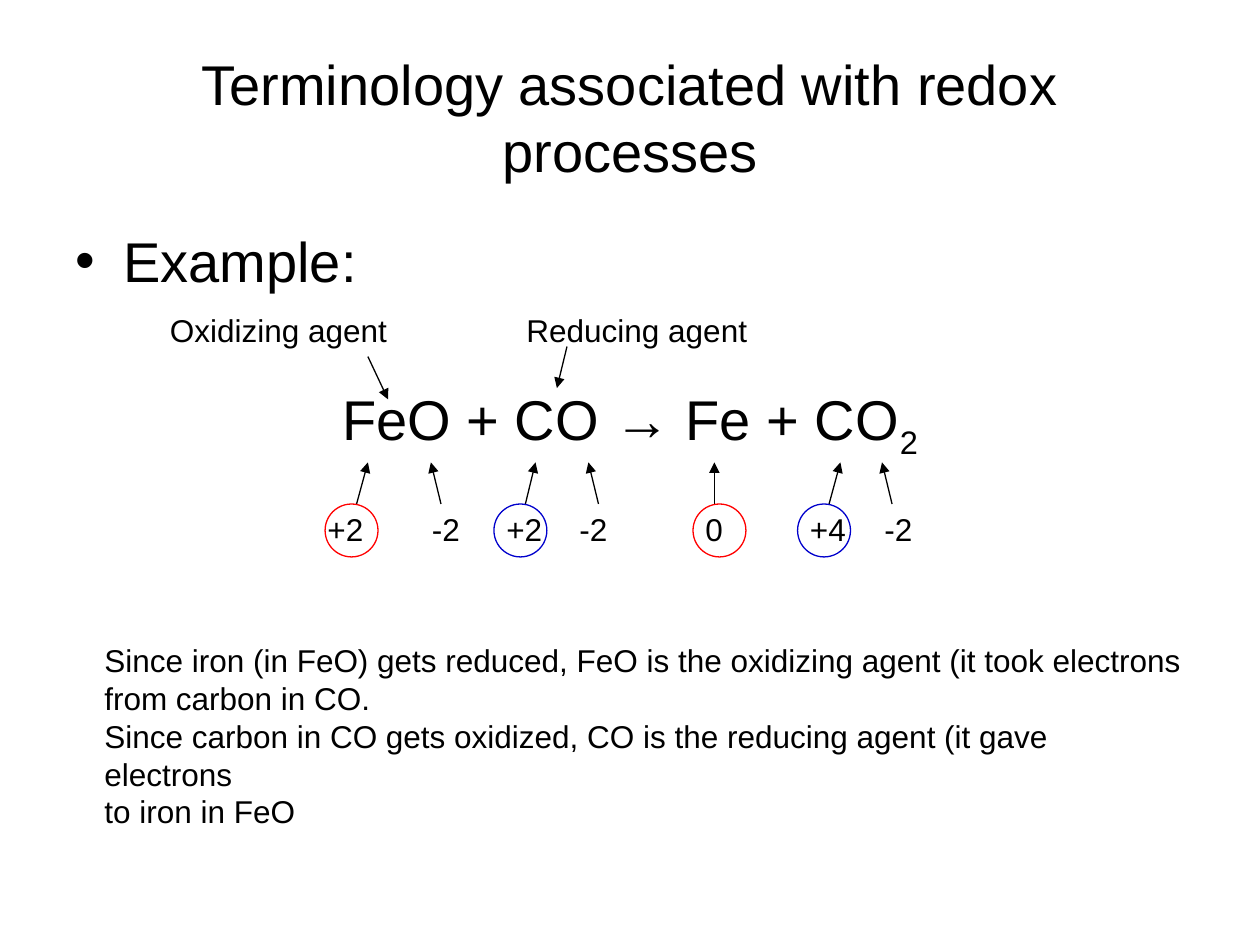
import pptx
import pptx.dml.color
import pptx.enum.shapes
import pptx.enum.text
import pptx.oxml
import pptx.oxml.ns
import pptx.util

Inches = pptx.util.Inches
Pt = pptx.util.Pt
Align = pptx.enum.text.PP_ALIGN
Anchor = pptx.enum.text.MSO_ANCHOR


def color(value):
    return pptx.dml.color.RGBColor.from_string(value)


def xml(tag, attributes=""):
    namespace = pptx.oxml.ns.nsdecls("a")
    return pptx.oxml.parse_xml(f"<a:{tag} {namespace} {attributes}/>")


def apply(target, values):
    for name, value in values.items():
        setattr(target, name, value)


class RedoxSlide:
    ink = "000000"
    line_width = Pt(0.75)
    body_size = Pt(18)
    large_size = Pt(32)

    def __init__(self, presentation):
        self.slide = presentation.slides.add_slide(presentation.slide_layouts[6])

    def text(self, left, top, width, height, lines, size=body_size,
             wrap=False, anchor=Anchor.TOP, align=Align.LEFT):
        shape = self.slide.shapes.add_textbox(
            Inches(left), Inches(top), Inches(width), Inches(height))
        frame = shape.text_frame
        apply(frame, {"word_wrap": wrap, "vertical_anchor": anchor})
        for index, line in enumerate(lines):
            paragraph = frame.paragraphs[0] if index == 0 else frame.add_paragraph()
            paragraph.alignment = align
            self.run(paragraph, line, size)
        return frame

    def run(self, paragraph, text, size):
        run = paragraph.add_run()
        run.text = text
        apply(run.font, {"name": "Arial", "size": size})
        run.font.color.rgb = color(self.ink)
        return run

    def body(self, heading, equation, subscript):
        frame = self.text(0.5, 1.75, 9, 4.95, [heading, equation],
                          self.large_size, wrap=True)
        first, second = frame.paragraphs
        apply(first, {"space_before": Pt(3)})
        apply(second, {"space_before": Pt(52), "alignment": Align.CENTER})
        properties = first._p.get_or_add_pPr()
        apply_indent = {"marL": Inches(0.38), "indent": Inches(-0.38)}
        for name, value in apply_indent.items():
            properties.set(name, str(value))
        properties.append(xml("buFont", 'typeface="Arial"'))
        properties.append(xml("buChar", 'char="•"'))
        run = self.run(second, subscript, self.large_size)
        run.font._element.set("baseline", "-25000")

    def arrow(self, start_x, start_y, end_x, end_y):
        connector = self.slide.shapes.add_connector(
            pptx.enum.shapes.MSO_CONNECTOR.STRAIGHT,
            Inches(start_x), Inches(start_y), Inches(end_x), Inches(end_y))
        connector.line.color.rgb = color(self.ink)
        connector.line.width = self.line_width
        connector.line._get_or_add_ln().append(xml("tailEnd", 'type="triangle"'))
        connector._element.spPr.append(xml("effectLst"))

    def circle(self, left, top, outline):
        shape = self.slide.shapes.add_shape(
            pptx.enum.shapes.MSO_SHAPE.OVAL,
            Inches(left), Inches(top), Inches(0.42), Inches(0.42))
        shape.shadow.inherit = False
        shape.fill.background()
        shape.line.color.rgb = color(outline)
        shape.line.width = self.line_width


def main():
    presentation = pptx.Presentation()
    apply(presentation, {"slide_width": Inches(10), "slide_height": Inches(7.5)})
    redox = RedoxSlide(presentation)

    redox.text(0.5, 0.3, 9, 1.25, ["Terminology associated with redox processes"],
               redox.large_size, wrap=True, anchor=Anchor.MIDDLE, align=Align.CENTER)
    redox.body("Example:", "FeO + CO → Fe + CO", "2")

    iron, carbon = "FF0000", "0000CC"
    state_top, arrow_tip = 4, 3.67
    oxidation_states = [
        ("+2", 2.5, 0.49, 2.83, 2.92, 2.58, iron),
        ("-2", 3.33, 0.42, 3.5, 3.42, None, None),
        ("+2", 3.92, 0.49, 4.17, 4.25, 3.92, carbon),
        ("-2", 4.5, 0.42, 4.75, 4.67, None, None),
        ("0", 5.5, 0.34, 5.67, 5.67, 5.5, iron),
        ("+4", 6.33, 0.49, 6.58, 6.67, 6.33, carbon),
        ("-2", 6.92, 0.42, 7.08, 7, None, None),
    ]
    for state, left, width, start_x, end_x, circle_left, outline in oxidation_states:
        redox.text(left, state_top, width, 0.4, [state])
        redox.arrow(start_x, state_top, end_x, arrow_tip)
        if outline:
            redox.circle(circle_left, state_top, outline)

    redox.text(0.73, 5.04, 8.77, 1.3, [
        "Since iron (in FeO) gets reduced, FeO is the oxidizing agent (it took electrons",
        "from carbon in CO.",
        "Since carbon in CO gets oxidized, CO is the reducing agent (it gave electrons",
        "to iron in FeO",
    ])

    agents = [
        ("Oxidizing agent", 1.25, 1.92, (2.92, 2.83, 3.08, 3.17)),
        ("Reducing agent", 4.08, 1.95, (4.5, 2.75, 4.42, 3.08)),
    ]
    for label, left, width, pointer in agents:
        redox.text(left, 2.42, width, 0.4, [label])
        redox.arrow(*pointer)

    presentation.save("out.pptx")


if __name__ == "__main__":
    main()
